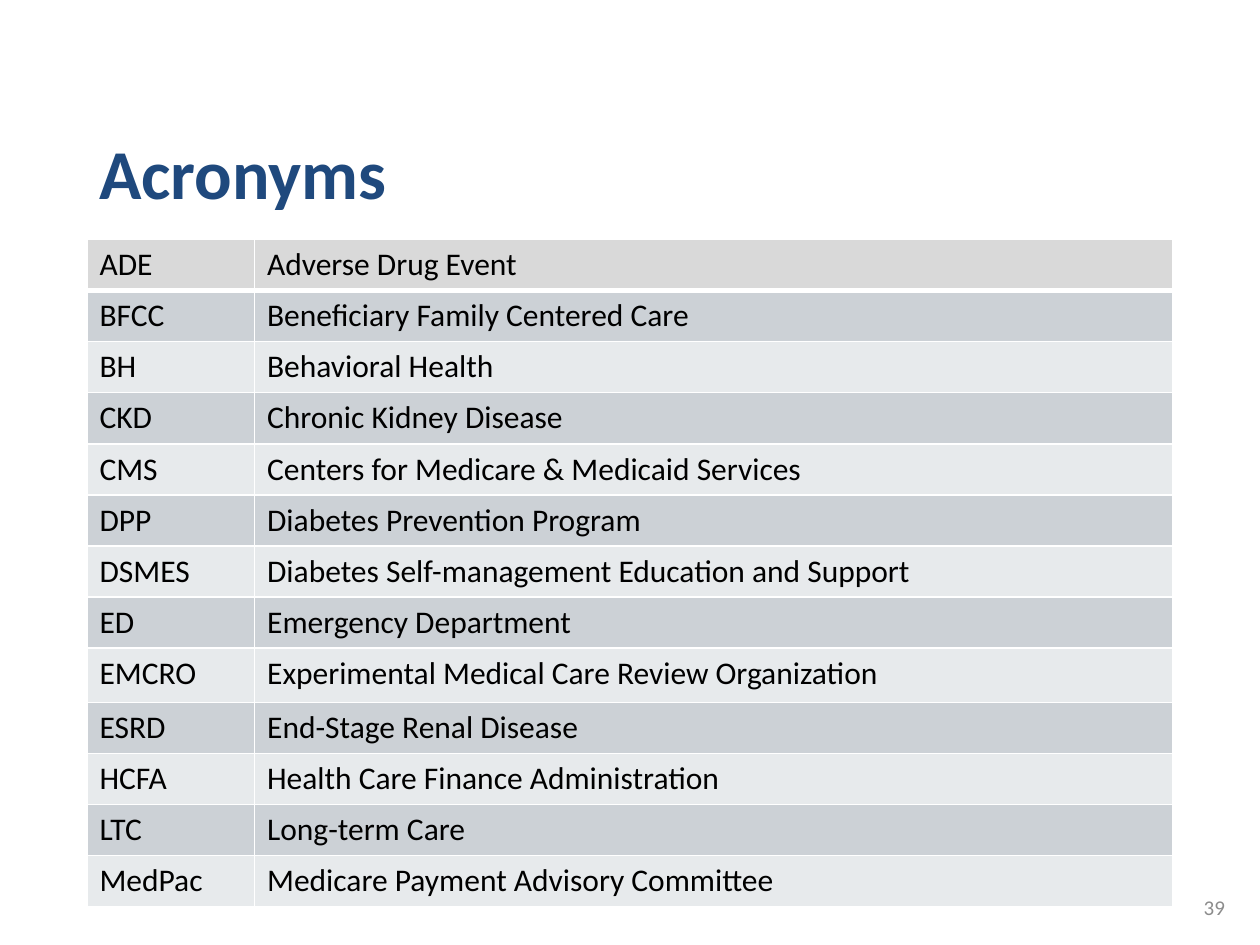
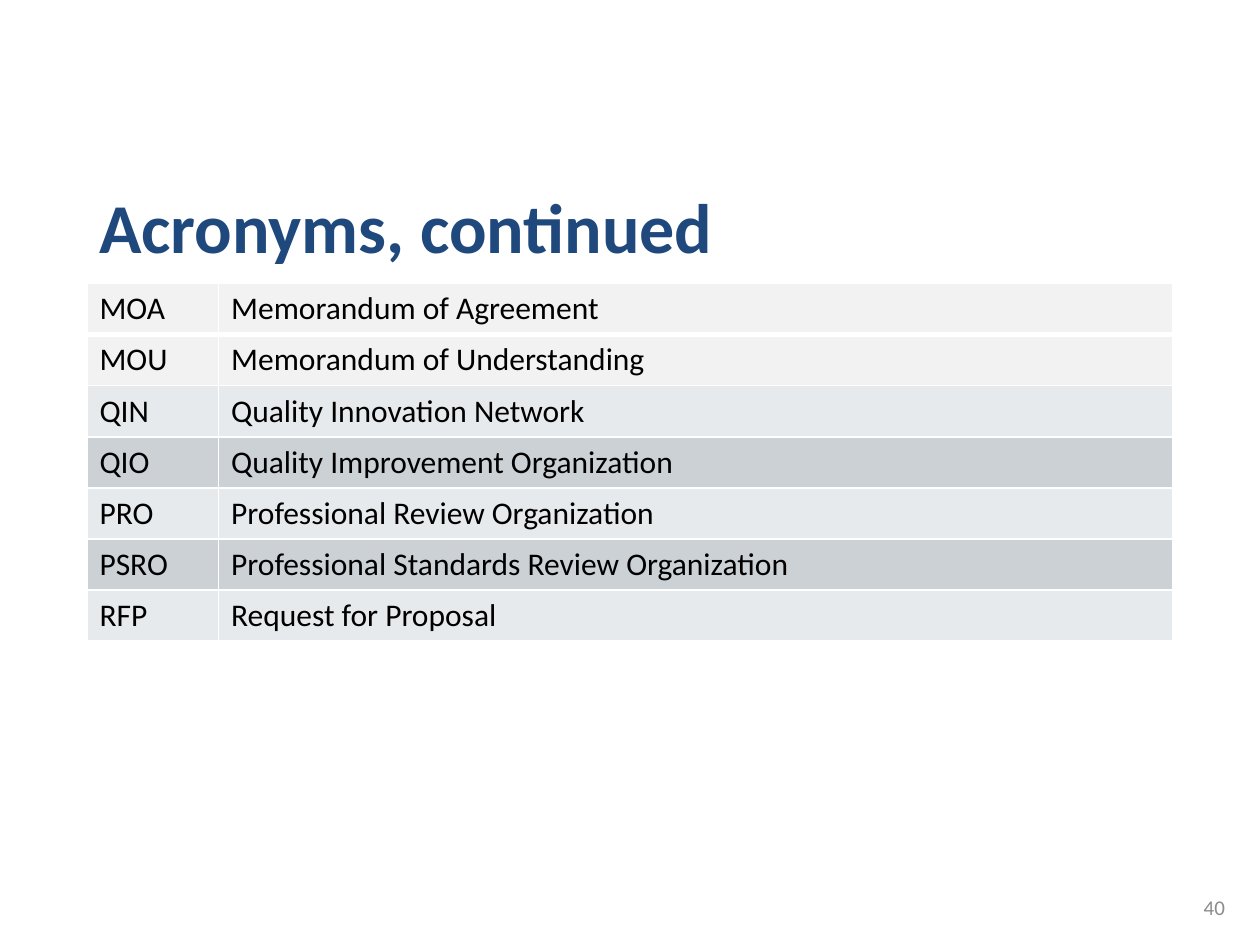
import dataclasses

import lxml.etree
import pptx
import pptx.dml.color
import pptx.enum.text
import pptx.oxml.ns
import pptx.util

GRID_COLUMNS, GRID_ROWS = 100, 75
SLIDE_WIDTH, SLIDE_HEIGHT = pptx.util.Inches(10), pptx.util.Inches(7.5)
TABLE_LEFT, TABLE_WIDTH = 6.9, 86.2
ROW_HEIGHT = 28.4 / 7

Anchor = pptx.enum.text.MSO_ANCHOR
Align = pptx.enum.text.PP_ALIGN


@dataclasses.dataclass(frozen=True)
class Theme:
    font: str = "Calibri"
    title: str = "1F497D"
    body: str = "000000"
    page_number: str = "8C8C8C"
    rule: str = "FFFFFF"
    dark_band: str = "CCD1D6"
    light_band: str = "E7EAEC"
    title_size: int = 40
    body_size: int = 18
    page_number_size: int = 12
    rule_width: int = 1
    heading_rule_width: int = 3


THEME = Theme()


@dataclasses.dataclass(frozen=True)
class Box:
    """A rectangle in grid columns and rows."""
    left: float
    top: float
    width: float
    height: float

    def lengths(self) -> tuple[int, int, int, int]:
        return (across(self.left), down(self.top),
                across(self.width), down(self.height))


@dataclasses.dataclass(frozen=True)
class AcronymSlide:
    title: str
    title_top: float
    title_height: float
    table_top: float
    acronym_width: float
    page_number: int
    entries: tuple[tuple[str, str], ...]
    special_fills: dict[int, str]
    special_heights: dict[int, float] = dataclasses.field(default_factory=dict)


SLIDES = (
    AcronymSlide(
        "Acronyms", 11.3, 6.2, 19, 13.3, 39,
        (("ADE", "Adverse Drug Event"),
         ("BFCC", "Beneficiary Family Centered Care"),
         ("BH", "Behavioral Health"),
         ("CKD", "Chronic Kidney Disease"),
         ("CMS", "Centers for Medicare & Medicaid Services"),
         ("DPP", "Diabetes Prevention Program"),
         ("DSMES", "Diabetes Self-management Education and Support"),
         ("ED", "Emergency Department"),
         ("EMCRO", "Experimental Medical Care Review Organization"),
         ("ESRD", "End-Stage Renal Disease"),
         ("HCFA", "Health Care Finance Administration"),
         ("LTC", "Long-term Care"),
         ("MedPac", "Medicare Payment Advisory Committee")),
        special_fills={0: "D9D9D9"}, special_heights={8: 4.3}),
    AcronymSlide(
        "Acronyms, continued", 10, 11.8, 22.5, 10.45, 40,
        (("MOA", "Memorandum of Agreement"),
         ("MOU", "Memorandum of Understanding"),
         ("QIN", "Quality Innovation Network"),
         ("QIO", "Quality Improvement Organization"),
         ("PRO", "Professional Review Organization"),
         ("PSRO", "Professional Standards Review Organization"),
         ("RFP", "Request for Proposal")),
        special_fills={0: "F2F2F2", 1: "F2F2F2"}),
)


def across(columns: float) -> int:
    return round(SLIDE_WIDTH * columns / GRID_COLUMNS)


def down(rows: float) -> int:
    return round(SLIDE_HEIGHT * rows / GRID_ROWS)


def write_text(text_frame, text: str, *, size: int, color: str,
               bold: bool = False, align=Align.LEFT,
               line_spacing: float = 1.0) -> None:
    paragraph = text_frame.paragraphs[0]
    paragraph.alignment = align
    paragraph.line_spacing = line_spacing
    run = paragraph.add_run()
    run.text = text
    run.font.name = THEME.font
    run.font.size = pptx.util.Pt(size)
    run.font.bold = bold
    run.font.color.rgb = pptx.dml.color.RGBColor.from_string(color)


def add_text_box(slide, box: Box, text: str, anchor, **text_format) -> None:
    text_frame = slide.shapes.add_textbox(*box.lengths()).text_frame
    text_frame.word_wrap = True
    text_frame.vertical_anchor = anchor
    write_text(text_frame, text, **text_format)


def add_borders(cell, row_index: int) -> None:
    """Draw white rules, with a thicker one between the first two rows."""
    widths = dict.fromkeys(("lnL", "lnR", "lnT", "lnB"), THEME.rule_width)
    if row_index == 0:
        widths["lnB"] = THEME.heading_rule_width
    elif row_index == 1:
        widths["lnT"] = THEME.heading_rule_width
    qualified = pptx.oxml.ns.qn
    properties = cell._tc.get_or_add_tcPr()
    for side, width in widths.items():
        line = lxml.etree.SubElement(properties, qualified(f"a:{side}"),
                                     w=str(pptx.util.Pt(width)))
        fill = lxml.etree.SubElement(line, qualified("a:solidFill"))
        lxml.etree.SubElement(fill, qualified("a:srgbClr"), val=THEME.rule)


def add_acronym_table(slide, content: AcronymSlide) -> None:
    heights = [content.special_heights.get(index, ROW_HEIGHT)
               for index in range(len(content.entries))]
    box = Box(TABLE_LEFT, content.table_top, TABLE_WIDTH, sum(heights))
    table = slide.shapes.add_table(len(heights), 2, *box.lengths()).table
    table.first_row = table.horz_banding = False
    table.columns[0].width = across(content.acronym_width)
    table.columns[1].width = across(TABLE_WIDTH - content.acronym_width)
    for row_index, entry in enumerate(content.entries):
        table.rows[row_index].height = down(heights[row_index])
        band = THEME.dark_band if row_index % 2 else THEME.light_band
        color = content.special_fills.get(row_index, band)
        for cell, text in zip(table.rows[row_index].cells, entry):
            add_borders(cell, row_index)
            cell.fill.solid()
            cell.fill.fore_color.rgb = pptx.dml.color.RGBColor.from_string(color)
            write_text(cell.text_frame, text,
                       size=THEME.body_size, color=THEME.body)


def add_acronym_slide(presentation, content: AcronymSlide) -> None:
    slide = presentation.slides.add_slide(presentation.slide_layouts[6])
    title_box = Box(TABLE_LEFT, content.title_top,
                    TABLE_WIDTH, content.title_height)
    add_text_box(slide, title_box, content.title, Anchor.BOTTOM,
                 size=THEME.title_size, color=THEME.title, bold=True,
                 line_spacing=0.9)
    add_acronym_table(slide, content)
    add_text_box(slide, Box(91.7, 70, 6.5, 4), str(content.page_number),
                 Anchor.MIDDLE, size=THEME.page_number_size,
                 color=THEME.page_number, align=Align.RIGHT)


def main() -> None:
    presentation = pptx.Presentation()
    presentation.slide_width = SLIDE_WIDTH
    presentation.slide_height = SLIDE_HEIGHT
    for content in SLIDES:
        add_acronym_slide(presentation, content)
    presentation.save("out.pptx")


if __name__ == "__main__":
    main()
